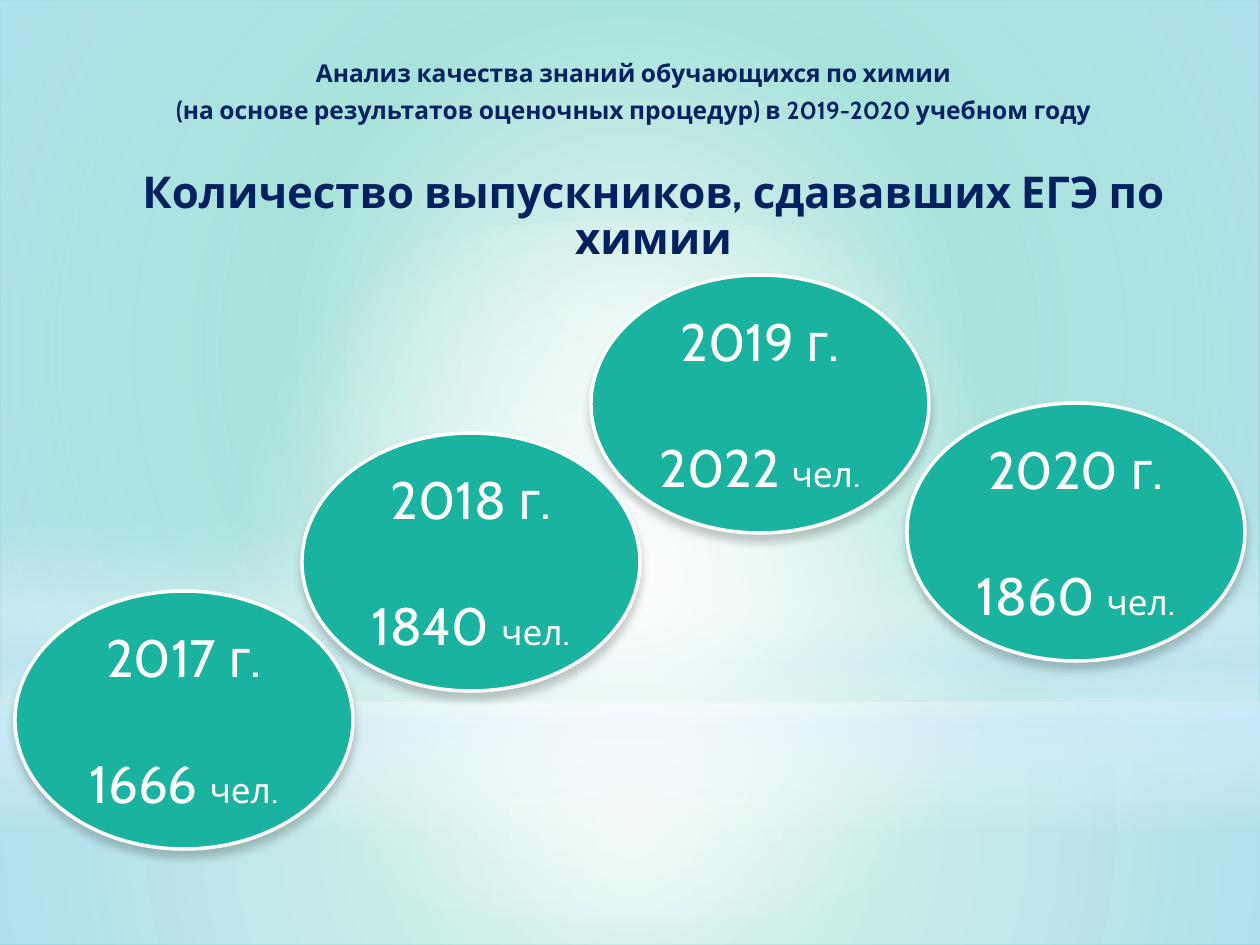
import dataclasses

import pptx
import pptx.dml.color
import pptx.enum.shapes
import pptx.enum.text
import pptx.oxml
import pptx.oxml.ns
import pptx.util

SHAPE = pptx.enum.shapes.MSO_SHAPE
ANCHOR = pptx.enum.text.MSO_ANCHOR
CENTER = pptx.enum.text.PP_ALIGN.CENTER
NS = pptx.oxml.ns.nsdecls("a")
PX_PER_INCH = 126


@dataclasses.dataclass(frozen=True)
class Theme:
    font: str = "Cabin"
    teal: str = "1AB39F"
    navy: str = "002060"
    white: str = "FFFFFF"
    sky: str = "D6ECFF"
    header: int = 14
    heading: int = 25
    figure: int = 30
    unit: int = 20


THEME = Theme()
RADIAL = ('<a:path path="circle"><a:fillToRect l="50000" t="50000" '
          'r="50000" b="50000"/></a:path>')
VERTICAL = '<a:lin ang="5400000" scaled="0"/>'

# shape, box, direction, stops of (position %, colour, opacity %)
BACKDROP = [
    (SHAPE.RECTANGLE, (0, 703, 1260, 242), RADIAL,
     [(0, THEME.white, 91), (37, THEME.white, 76), (100, THEME.sky, 79)]),
    (SHAPE.RECTANGLE, (0, 0, 1260, 703), RADIAL,
     [(0, THEME.white, 89), (48, THEME.white, 62), (100, THEME.sky, 79)]),
    (SHAPE.RECTANGLE, (0, 519, 1260, 315), VERTICAL,
     [(0, THEME.white, 0), (29, THEME.white, 30), (45, THEME.sky, 40),
      (55, THEME.white, 26), (65, THEME.sky, 60), (100, THEME.white, 0)]),
    (SHAPE.OVAL, (0, 220, 1260, 703), RADIAL,
     [(0, THEME.white, 100), (56, THEME.white, 0)]),
]

BUBBLE_SIZE = (338, 258)
# year, number of graduates, left and top
BUBBLES = [
    ("2017", "1666", (15, 591)),
    ("2018", "1840", (302, 433)),
    ("2019", "2022", (591, 275)),
    ("2020", "1860", (907, 403)),
]


def px(*lengths):
    return [pptx.util.Emu(round(n * 914400 / PX_PER_INCH)) for n in lengths]


def rgb(color):
    return pptx.dml.color.RGBColor.from_string(color)


def apply(target, **values):
    for name, value in values.items():
        setattr(target, name, value)


def add_run(p, text, size, color, bold=False):
    r = p.add_run()
    r.text = text
    apply(r.font, name=THEME.font, size=pptx.util.Pt(size), bold=bold)
    r.font.color.rgb = rgb(color)


def add_backdrop(s):
    for kind, box, direction, stops in BACKDROP:
        sp = s.shapes.add_shape(kind, *px(*box))
        sp.shadow.inherit = False
        sp.line.fill.background()
        sp.fill.background()
        stop_xml = "".join(
            f'<a:gs pos="{pos * 1000}"><a:srgbClr val="{color}">'
            f'<a:alpha val="{alpha * 1000}"/></a:srgbClr></a:gs>'
            for pos, color, alpha in stops)
        gradient = pptx.oxml.parse_xml(
            f'<a:gradFill {NS} rotWithShape="1"><a:gsLst>{stop_xml}</a:gsLst>'
            f'{direction}</a:gradFill>')
        sp_pr = sp._element.spPr
        sp_pr.replace(sp_pr.find(pptx.oxml.ns.qn("a:noFill")), gradient)


def fill_caption(sp, box, lines, size, spacing):
    apply(sp, **dict(zip(("left", "top", "width", "height"), px(*box))))
    tf = sp.text_frame
    apply(tf, word_wrap=True, vertical_anchor=ANCHOR.TOP,
          auto_size=pptx.enum.text.MSO_AUTO_SIZE.NONE)
    for i, line in enumerate(lines):
        p = tf.add_paragraph() if i else tf.paragraphs[0]
        apply(p, alignment=CENTER, line_spacing=spacing,
              space_before=pptx.util.Pt(size * 0.2),
              space_after=pptx.util.Pt(3))
        p._p.get_or_add_pPr().set("marL", str(px(6)[0]))
        add_run(p, line, size, THEME.navy, bold=True)


def add_bubble(s, box, year, count):
    sp = s.shapes.add_shape(SHAPE.OVAL, *px(*box))
    sp.fill.solid()
    sp.fill.fore_color.rgb = rgb(THEME.teal)
    sp.line.color.rgb = rgb(THEME.white)
    sp.line.width = pptx.util.Pt(2)
    sp._element.spPr.append(pptx.oxml.parse_xml(
        f'<a:effectLst {NS}><a:outerShdw blurRad="63500" dist="50800" '
        'dir="5400000" rotWithShape="0"><a:srgbClr val="000000">'
        '<a:alpha val="20000"/></a:srgbClr></a:outerShdw></a:effectLst>'))
    tf = sp.text_frame
    apply(tf, word_wrap=True, vertical_anchor=ANCHOR.MIDDLE)
    p = tf.paragraphs[0]
    p.alignment = CENTER
    add_run(p, f"{year} г.", THEME.figure, THEME.white)
    p = tf.add_paragraph()
    apply(p, alignment=CENTER, space_before=pptx.util.Pt(36))
    add_run(p, f"{count} ", THEME.figure, THEME.white)
    add_run(p, "чел.", THEME.unit, THEME.white)


def build_slide(prs):
    s = prs.slides.add_slide(prs.slide_layouts[5])
    s.background.fill.solid()
    s.background.fill.fore_color.rgb = rgb(THEME.teal)
    add_backdrop(s)

    title = s.shapes.title
    s.shapes._spTree.append(title._element)  # in front of the backdrop
    fill_caption(title, (35, 55, 1191, 110), [
        "Анализ качества знаний обучающихся по химии",
        "(на основе результатов оценочных процедур) в 2019-2020 учебном году",
    ], THEME.header, 0.9)

    box = (55, 165, 1191, 110)
    fill_caption(s.shapes.add_textbox(*px(*box)), box,
                 ["Количество выпускников, сдававших ЕГЭ по химии"],
                 THEME.heading, 0.88)

    for year, count, corner in BUBBLES:
        add_bubble(s, corner + BUBBLE_SIZE, year, count)


def main():
    prs = pptx.Presentation()
    prs.slide_width, prs.slide_height = px(1260, 945)
    build_slide(prs)
    prs.save("out.pptx")


if __name__ == "__main__":
    main()
